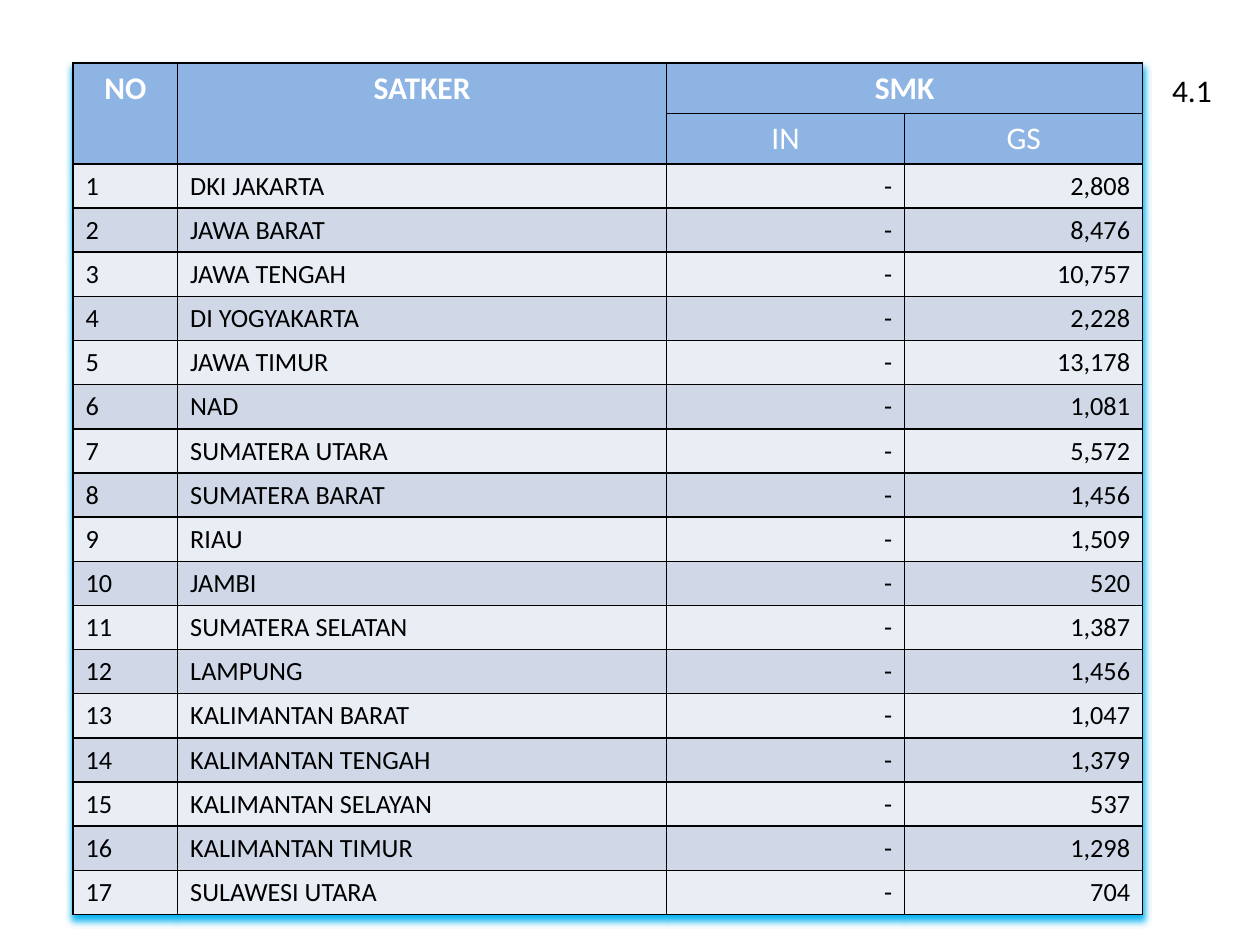
from lxml import etree
from pptx import Presentation
from pptx.dml.color import RGBColor
from pptx.enum import text
from pptx.oxml import parse_xml
from pptx.oxml.ns import qn
from pptx.util import Inches, Pt

NS = 'xmlns:a="http://schemas.openxmlformats.org/drawingml/2006/main"'
LEFT, CENTER, RIGHT = text.PP_ALIGN.LEFT, text.PP_ALIGN.CENTER, text.PP_ALIGN.RIGHT
HEADER, BANDS = "8EB4E3", ("E9EDF4", "D0D8E8")
COLUMNS = (0.83, 3.88, 1.89, 1.89)
HEADER_ROWS = 2
HEADER_HEIGHT, BODY_HEIGHT = 0.38, 0.33
SMK = [
    ("DKI JAKARTA", 2808),
    ("JAWA BARAT", 8476),
    ("JAWA TENGAH", 10757),
    ("DI YOGYAKARTA", 2228),
    ("JAWA TIMUR", 13178),
    ("NAD", 1081),
    ("SUMATERA UTARA", 5572),
    ("SUMATERA BARAT", 1456),
    ("RIAU", 1509),
    ("JAMBI", 520),
    ("SUMATERA SELATAN", 1387),
    ("LAMPUNG", 1456),
    ("KALIMANTAN BARAT", 1047),
    ("KALIMANTAN TENGAH", 1379),
    ("KALIMANTAN SELAYAN", 537),
    ("KALIMANTAN TIMUR", 1298),
    ("SULAWESI UTARA", 704),
]


def rgb(value):
    return RGBColor.from_string(value)


def write(tf, words, align, color="000000", **fmt):
    p = tf.paragraphs[0]
    p.alignment = align
    r = p.add_run()
    r.text = words
    r.font.color.rgb = rgb(color)
    for name, value in {"name": "Calibri", "bold": False, **fmt}.items():
        setattr(r.font, name, value)


def style_cell(cell, fill):
    cell.fill.solid()
    cell.fill.fore_color.rgb = rgb(fill)
    tcPr = cell._tc.get_or_add_tcPr()
    for i, side in enumerate(("lnL", "lnR", "lnT", "lnB")):
        tcPr.insert(i, parse_xml(
            f'<a:{side} {NS} w="{Pt(1)}"><a:solidFill>'
            f'<a:srgbClr val="000000"/></a:solidFill></a:{side}>'))


def add_shadow(table, color):
    effects = etree.Element(qn("a:effectLst"))
    shadow = etree.SubElement(effects, qn("a:outerShdw"), blurRad=str(Pt(4)),
                              dist=str(Pt(3)), dir="5400000", rotWithShape="0")
    etree.SubElement(shadow, qn("a:srgbClr"), val=color)
    table._tbl.tblPr.insert(0, effects)


def add_header(table):
    for first, last in (((0, 0), (1, 0)), ((0, 1), (1, 1)), ((0, 2), (0, 3))):
        table.cell(*first).merge(table.cell(*last))
    for row, col, words in ((0, 0, "NO"), (0, 1, "SATKER"), (0, 2, "SMK"),
                            (1, 2, "IN"), (1, 3, "GS")):
        write(table.cell(row, col).text_frame, words, CENTER, "FFFFFF",
              size=Pt(18), bold=row == 0)


def add_body(table):
    for no, (satker, gs) in enumerate(SMK, 1):
        values = (str(no), satker, "-", f"{gs:,}")
        for col, (words, align) in enumerate(zip(values, (LEFT, LEFT, RIGHT, RIGHT))):
            cell = table.cell(no + HEADER_ROWS - 1, col)
            write(cell.text_frame, words, align, size=Pt(15))


def add_smk_table(s):
    heights = [HEADER_HEIGHT] * HEADER_ROWS + [BODY_HEIGHT] * len(SMK)
    table = s.shapes.add_table(len(heights), len(COLUMNS), Inches(0.58), Inches(0.5),
                               Inches(sum(COLUMNS)), Inches(sum(heights))).table
    for column, width in zip(table.columns, COLUMNS):
        column.width = Inches(width)
    for i, (row, height) in enumerate(zip(table.rows, heights)):
        row.height = Inches(height)
        for cell in row.cells:
            style_cell(cell, HEADER if i < HEADER_ROWS else BANDS[i % 2])
    add_header(table)
    add_body(table)
    add_shadow(table, "00B0F0")


def add_number(s, words):
    sp = s.shapes.add_textbox(Inches(9.17), Inches(0.5), Inches(0.58), Inches(0.42))
    tf = sp.text_frame
    tf.word_wrap = True
    tf.vertical_anchor = text.MSO_ANCHOR.MIDDLE
    write(tf, words, CENTER, size=Pt(18))


def main():
    prs = Presentation()
    prs.slide_width, prs.slide_height = Inches(10), Inches(7.5)
    s = prs.slides.add_slide(prs.slide_layouts[6])
    add_number(s, "4.1")
    add_smk_table(s)
    prs.save("out.pptx")


if __name__ == "__main__":
    main()
